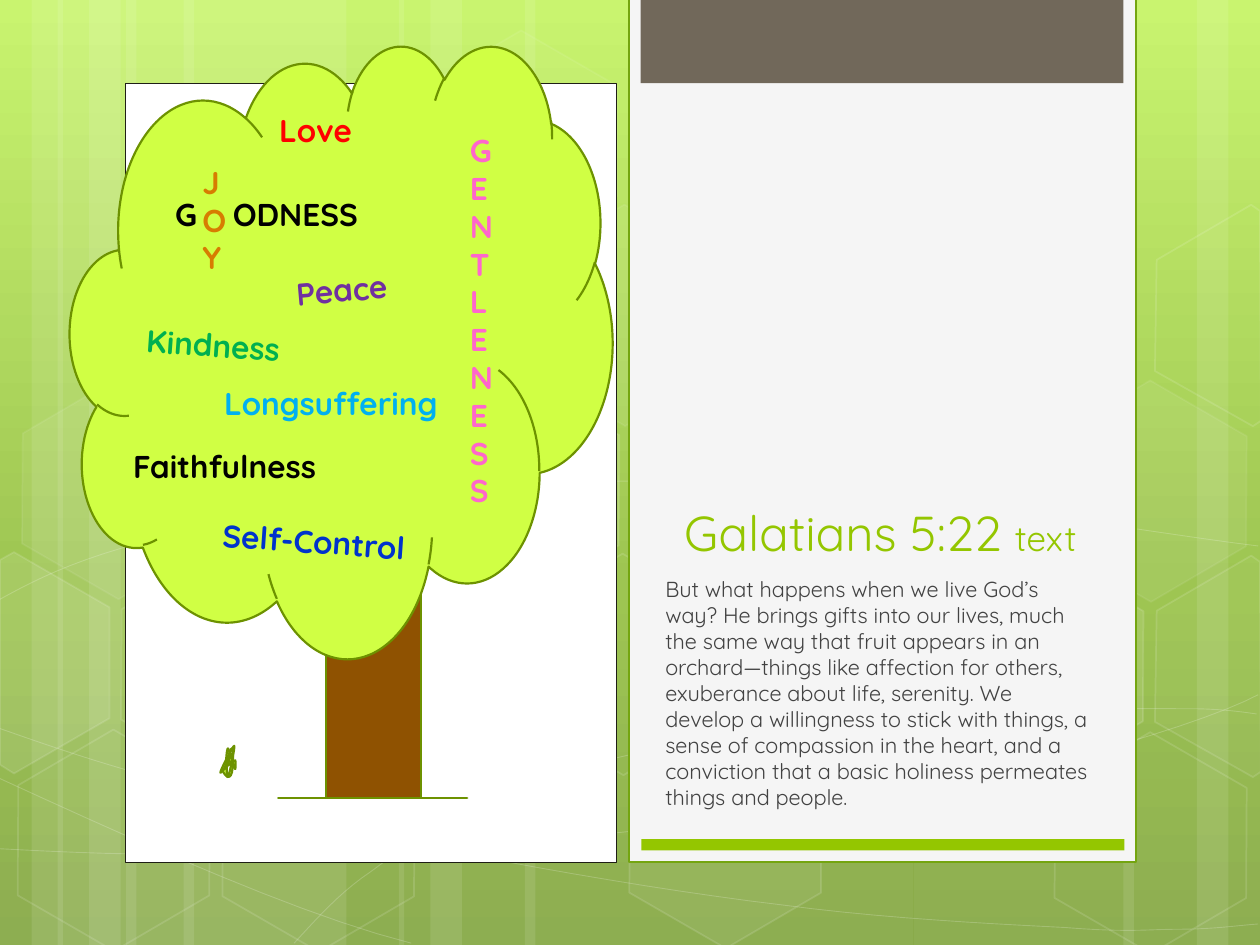
"""Build the Galatians 5:22 slide with its tree of fruits."""
from copy import deepcopy
from dataclasses import dataclass

from pptx import Presentation
from pptx.dml.color import RGBColor
from pptx.enum.shapes import MSO_SHAPE as Shape
from pptx.enum.text import MSO_ANCHOR as Anchor, MSO_AUTO_SIZE as AutoSize, PP_ALIGN as Align
from pptx.oxml.ns import qn
from pptx.oxml.xmlchemy import OxmlElement as new_element
from pptx.util import Pt


@dataclass(frozen=True)
class Theme:
    font: str = "Quicksand"
    white: str = "FFFFFF"
    panel: str = "F5F5F5"
    panel_edge: str = "74A510"
    taupe: str = "71685A"
    frame_edge: str = "1F1E16"
    green: str = "94C600"
    body: str = "424242"
    trunk: str = "8F5201"
    leaf: str = "D0FF44"
    leaf_edge: str = "6D9200"
    sky: tuple = ((0, "C3F35F"), (0.62, "93BF3F"), (1, "81A53E"))
    title_size: float = 28
    version_size: float = 20
    body_size: float = 12.4
    fruit_size: float = 18


THEME = Theme()
STRIPES = [(72, 126), (0, 36), (18, 60), (105, 126), (33, 36), (51, 60),
           (522, 126), (684, 36), (642, 60), (300, 222), (228, 36), (246, 60)]
WAVES = [
    [(-1, 485), (38, 487, 77, 489, 131, 488), (185, 487, 251, 479, 323, 479),
     (396, 472, 498, 458, 564, 444), (630, 431, 697, 409, 719, 397)],
    [(-1, 343), (19, 332, 40, 321, 81, 310), (122, 300, 180, 284, 244, 279),
     (308, 274, 385, 273, 464, 279), (544, 285, 676, 307, 719, 312)],
    [(-2, 444), (85, 484, 172, 523, 235, 539)],
    [(-1, 416), (22, 424, 44, 432, 86, 444), (128, 454, 191, 472, 251, 485),
     (310, 497, 387, 510, 446, 517), (505, 525, 570, 528, 608, 530),
     (646, 533, 656, 531, 674, 531), (693, 531, 706, 529, 719, 528)],
    [(168, 539), (181, 525, 194, 510, 212, 498), (229, 485, 253, 470, 273, 460),
     (293, 451, 305, 446, 332, 438), (359, 431, 407, 421, 432, 416),
     (457, 411, 461, 412, 483, 410), (505, 408, 541, 405, 566, 405),
     (590, 404, 632, 405, 680, 405), (693, 405, 705, 406, 718, 408)],
]
HEXAGONS = [(236, 225.5, 10, 12), (293, 325, 0, 12), (294, 125.5, 7, 8), (235, 26, 4, 8),
            (351.5, 424, 6, 12), (2, 425.5, 0, 12), (4.5, 224.5, 7, 8), (61, 325, 0, 12),
            (119, 426, 0, 12), (62.5, 123, 0, 12), (535.5, 326, 10, 12),
            (594.5, 427, 0, 12), (594.5, 226, 7, 8)]
LEFT_HEXAGON = [(0, 320), (8, 315.5), (62.5, 347), (62.5, 410.5), (8, 442), (0, 437)]
RIGHT_HEXAGON = [(661, 349), (715, 317.5), (720, 321), (720.5, 441), (716, 444), (660, 412.5)]
TRUNK = [(159, 456), (186.5, 456), (186.5, 318), (240.5, 318), (240.5, 456), (267, 456)]
LEAF_STROKES = [
    [(129.6, 437), (128.9, 436.3, 129.6, 427.7, 130.3, 427.7),
     (131, 427.7, 134.6, 443.5, 134.6, 438.5), (134.6, 432.7, 134.6, 434.9, 133.9, 434.9),
     (132.5, 434.2, 130.3, 438.5, 129.6, 437)],
    [(126, 441.4), (126, 439.9, 133.2, 426.2, 133.9, 426.2),
     (134.6, 426.2, 129.6, 452.2, 129.6, 441.4), (129.6, 430.6, 132.5, 436.3, 131.8, 436.3),
     (131, 436.3, 125.3, 442.8, 126, 441.4)],
    [(132.5, 430.6), (132.5, 431.3, 127.4, 439.9, 127.4, 440.6),
     (127.4, 441.4, 133.2, 450.7, 133.2, 434.2), (133.2, 418.3, 129.6, 437, 129.6, 436.3),
     (129.6, 435.6, 133.2, 429.8, 132.5, 430.6)],
]
FRUITS = [
    (["Love"], "FF0000", (152.5, 60, 78, 29), 0),
    (list("JOY"), "D77C01", (108.5, 89.5, 24, 72.7), 0),
    (["Peace"], "7030A0", (162, 149, 115, 29), 355),
    (["Kindness"], "00B050", (76.5, 183.5, 114, 29), 4),
    (list("GENTLENESS"), "FF66CC", (261.5, 71.5, 30, 225.4), 0),
    (["Longsuffering"], "00B0F0", (121, 216, 168, 29), 0),
    (["G\tODNESS"], "000000", (93, 108, 144, 29), 0),
    (["Faithfulness"], "000000", (69, 252, 180, 29), 0),
    (["Self-Control"], "0033CC", (120, 296.5, 165, 29), 4),
]
PASSAGE = ("But what happens when we live God’s way? He brings gifts into our lives, much the "
           "same way that fruit appears in an orchard—things like affection for others, "
           "exuberance about life, serenity. We develop a willingness to stick with things, a "
           "sense of compassion in the heart, and a conviction that a basic holiness permeates "
           "things and people.")


def set_color(fill, color, opacity):
    fill.solid()
    fill.fore_color.rgb = RGBColor.from_string(color)
    if opacity < 100:
        for value in fill._xPr.iter(qn("a:srgbClr")):
            if value.getparent().getparent() is fill._xPr:
                alpha = new_element("a:alpha")
                alpha.set("val", str(opacity * 1000))
                value.append(alpha)


def paint(shape, fill=None, line=None, width=1.25, fill_opacity=100, line_opacity=100):
    shape.shadow.inherit = False
    if fill:
        set_color(shape.fill, fill, fill_opacity)
    else:
        shape.fill.background()
    if line:
        set_color(shape.line.fill, line, line_opacity)
        shape.line.width = Pt(width)
    else:
        shape.line.fill.background()


def add_preset(page, kind, area, **look):
    shape = page.shapes.add_shape(kind, *map(Pt, area))
    paint(shape, **look)
    return shape


def add_outline(page, outlines, close=True, **look):
    builder = None
    for outline in outlines:
        start, *rest = [(Pt(x), Pt(y)) for x, y in outline]
        if builder is None:
            builder = page.shapes.build_freeform(*start)
        else:
            builder.move_to(*start)
        builder.add_line_segments(rest, close=close)
    paint(builder.convert_to_shape(), **look)


def trace(curve, steps=10):
    start, *segments = curve
    points = [start]
    for ax, ay, bx, by, end_x, end_y in segments:
        x, y = points[-1]
        for step in range(1, steps + 1):
            t = step / steps
            weights = ((1 - t) ** 3, 3 * t * (1 - t) ** 2, 3 * t * t * (1 - t), t ** 3)
            points.append(tuple(sum(w * v for w, v in zip(weights, values))
                                for values in ((x, ax, bx, end_x), (y, ay, by, end_y))))
    return points


def write(para, text, size, color, bold=False, align=Align.LEFT):
    span = para.add_run()
    span.text = text
    span.font.name, span.font.size, span.font.bold = THEME.font, Pt(size), bold
    span.font.color.rgb = RGBColor.from_string(color)
    para.alignment = align


def add_tab_stop(para, position):
    stops = new_element("a:tabLst")
    stop = new_element("a:tab")
    stop.set("pos", str(Pt(position)))
    stop.set("algn", "l")
    stops.append(stop)
    para._p.get_or_add_pPr().append(stops)


def add_fruit(page, lines, color, area, turn):
    box = page.shapes.add_textbox(*map(Pt, area))
    box.rotation = turn
    frame = box.text_frame
    frame.word_wrap = True
    for index, line in enumerate(lines):
        para = frame.add_paragraph() if index else frame.paragraphs[0]
        write(para, line, THEME.fruit_size, color, bold=True)
        if "\t" in line:
            add_tab_stop(para, 33)


def place(box, area, anchor):
    box.left, box.top, box.width, box.height = map(Pt, area)
    box.element.getparent().append(box.element)
    box.text_frame.auto_size = AutoSize.NONE
    box.text_frame.vertical_anchor = anchor
    return box.text_frame.paragraphs[0]


def fill_sky(page):
    fill = page.background.fill
    fill.gradient()
    fill.gradient_angle = 270
    stops = next(page.element.iter(qn("a:gsLst")))
    stops.insert(1, deepcopy(stops[0]))
    for stop, (position, color) in zip(fill.gradient_stops, THEME.sky):
        stop.position = position
        stop.color.rgb = RGBColor.from_string(color)


def add_backdrop(page):
    white = THEME.white
    for left, width in STRIPES:
        add_preset(page, Shape.RECTANGLE, (left, 0, width, 540), fill=white, fill_opacity=10)
    for wave in WAVES:
        add_outline(page, [trace(wave)], close=False, line=white, width=0.5, line_opacity=20)
    for left, top, inside, edge in HEXAGONS:
        hexagon = add_preset(page, Shape.HEXAGON, (left, top, 126, 109.4), line=white, width=1,
                             fill=white if inside else None, fill_opacity=inside,
                             line_opacity=edge)
        hexagon.rotation = 30
        hexagon.adjustments[0] = 0.285
    upper = [(x, y - 200.5) for x, y in RIGHT_HEXAGON]
    for outline, inside in ((LEFT_HEXAGON, 10), (RIGHT_HEXAGON, 4), (upper, 0)):
        add_outline(page, [outline], fill=white if inside else None, fill_opacity=inside,
                    line=white, width=1, line_opacity=12)


def add_panels(page):
    for area, look in (
        ((359.5, -1.5, 289.5, 494), dict(fill=THEME.panel, line=THEME.panel_edge)),
        ((366, -1.5, 276, 49), dict(fill=THEME.taupe)),
        ((71.5, 47.5, 280.5, 445), dict(fill=THEME.white, line=THEME.frame_edge, width=0.25)),
        ((366.5, 479.5, 276, 6.5), dict(fill=THEME.green)),
    ):
        add_preset(page, Shape.RECTANGLE, area, **look)


def add_passage(page):
    title, picture, body = page.placeholders
    picture.element.getparent().remove(picture.element)
    para = place(title, (373, 209.5, 260, 115), Anchor.BOTTOM)
    for text, size in (("Galatians 5:22 ", THEME.title_size), ("text", THEME.version_size)):
        write(para, text, size, THEME.green, align=Align.CENTER)
    para = place(body, (373, 325.5, 260, 119.5), Anchor.TOP)
    write(para, PASSAGE, THEME.body_size, THEME.body)


def add_tree(page):
    add_outline(page, [TRUNK], fill=THEME.trunk, line=THEME.leaf_edge)
    leafy = dict(fill=THEME.leaf, line=THEME.leaf_edge)
    add_preset(page, Shape.CLOUD, (40, 25.5, 310, 350), **leafy)
    add_outline(page, [trace(stroke) for stroke in LEAF_STROKES], **leafy)
    for fruit in FRUITS:
        add_fruit(page, *fruit)


def main():
    deck = Presentation()
    deck.slide_width, deck.slide_height = Pt(720), Pt(540)
    page = deck.slides.add_slide(deck.slide_layouts[8])
    fill_sky(page)
    add_backdrop(page)
    add_panels(page)
    add_passage(page)
    add_tree(page)
    deck.save("out.pptx")


if __name__ == "__main__":
    main()
